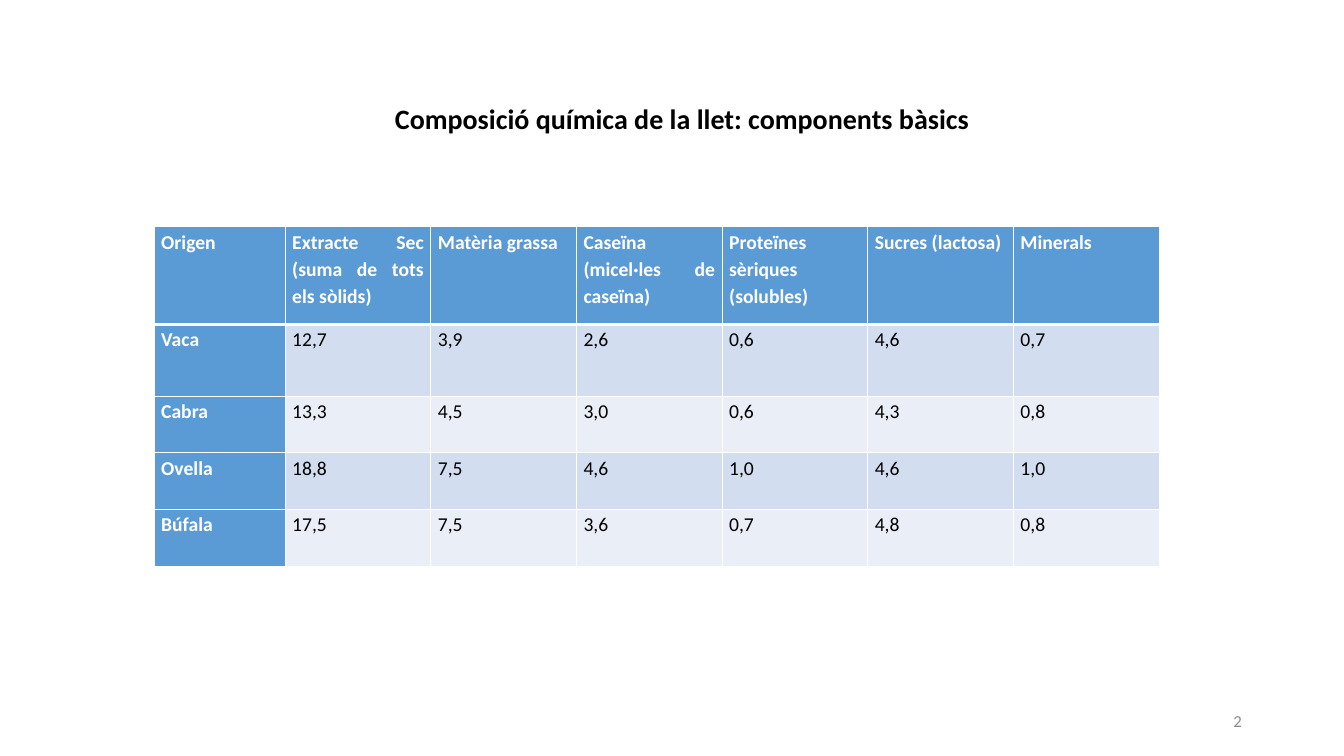
from lxml.etree import SubElement
from pptx import Presentation
from pptx.dml.color import RGBColor
from pptx.enum.text import MSO_ANCHOR as Anchor, MSO_AUTO_SIZE as AutoSize, PP_ALIGN as Align
from pptx.oxml.ns import qn
from pptx.util import Pt

WHITE = RGBColor(0xFF, 0xFF, 0xFF)
BLACK = RGBColor(0x00, 0x00, 0x00)
GREY = RGBColor(0x8C, 0x8C, 0x8C)
HEADING_BLUE = RGBColor(0x5B, 0x9B, 0xD5)
BANDS = [RGBColor(0xD2, 0xDE, 0xEF), RGBColor(0xEA, 0xEF, 0xF7)]

ORIGIN_WIDTH = 93.6
ROW_HEIGHTS = [69.84, 51.12, 40.56, 40.56, 40.56]
COMPOSITION = [
    ["Origen", "Extracte Sec (suma de tots els sòlids)", "Matèria grassa",
     "Caseïna (micel·les de caseïna)", "Proteïnes sèriques (solubles)",
     "Sucres (lactosa)", "Minerals"],
    ["Vaca", "12,7", "3,9", "2,6", "0,6", "4,6", "0,7"],
    ["Cabra", "13,3", "4,5", "3,0", "0,6", "4,3", "0,8"],
    ["Ovella", "18,8", "7,5", "4,6", "1,0", "4,6", "1,0"],
    ["Búfala", "17,5", "7,5", "3,6", "0,7", "4,8", "0,8"],
]

CELL_FORMAT = {"margin_left": Pt(5), "margin_right": Pt(5), "margin_top": 0,
               "margin_bottom": 0, "vertical_anchor": Anchor.TOP}
CELL_PARAGRAPH = {"alignment": Align.JUSTIFY, "line_spacing": 1.15, "space_after": Pt(10)}


def apply_format(target, values):
    """Set every attribute named in values on the target."""
    for attribute, value in values.items():
        setattr(target, attribute, value)


def write(paragraph, text, size, color, bold=False):
    """Put one formatted run of text in a paragraph."""
    run = paragraph.add_run()
    run.text = text
    apply_format(run.font, {"name": "Calibri", "size": Pt(size), "bold": bold})
    run.font.color.rgb = color


def add_borders(cell, bottom_width, top_width):
    """Draw white rules around a table cell."""
    properties = cell._tc.get_or_add_tcPr()
    widths = {"a:lnL": 1, "a:lnR": 1, "a:lnT": top_width, "a:lnB": bottom_width}
    for side, width in widths.items():
        rule = SubElement(properties, qn(side), w=str(Pt(width)))
        SubElement(SubElement(rule, qn("a:solidFill")), qn("a:srgbClr"), val=str(WHITE))


def add_text(slide, box, text, size, color, bold=False, align=Align.LEFT,
             anchor=Anchor.TOP, auto_size=AutoSize.NONE):
    """Add a wrapped one-line text box in the given box."""
    frame = slide.shapes.add_textbox(*map(Pt, box)).text_frame
    apply_format(frame, {"word_wrap": True, "vertical_anchor": anchor, "auto_size": auto_size})
    frame.paragraphs[0].alignment = align
    write(frame.paragraphs[0], text, size, color, bold)


def add_composition_table(slide, box):
    """Add the milk composition table in the given box."""
    table = slide.shapes.add_table(len(COMPOSITION), len(COMPOSITION[0]), *map(Pt, box)).table
    apply_format(table, {"first_row": True, "first_col": True, "horz_banding": True})
    component_width = (box[2] - ORIGIN_WIDTH) / (len(COMPOSITION[0]) - 1)
    for index, column in enumerate(table.columns):
        column.width = Pt(component_width if index else ORIGIN_WIDTH)
    for row_index, (height, entries) in enumerate(zip(ROW_HEIGHTS, COMPOSITION)):
        table.rows[row_index].height = Pt(height)
        for column_index, entry in enumerate(entries):
            cell = table.cell(row_index, column_index)
            heading = row_index == 0 or column_index == 0
            apply_format(cell, CELL_FORMAT)
            add_borders(cell, 3 if row_index == 0 else 1, 3 if row_index == 1 else 1)
            cell.fill.solid()
            cell.fill.fore_color.rgb = HEADING_BLUE if heading else BANDS[(row_index - 1) % 2]
            paragraph = cell.text_frame.paragraphs[0]
            apply_format(paragraph, CELL_PARAGRAPH)
            write(paragraph, entry, 14, WHITE if heading else BLACK, heading)


def build_composition_slide(deck):
    """Add the slide with its table, page number and title."""
    slide = deck.slides.add_slide(deck.slide_layouts[6])
    add_composition_table(slide, (110.16, 162, 717.84, 242.64))
    add_text(slide, (678.24, 500.4, 216, 28.8), "2", 12, GREY,
             align=Align.RIGHT, anchor=Anchor.MIDDLE)
    add_text(slide, (275.04, 69.12, 450.72, 31.68),
             "Composició química de la llet: components bàsics", 20, BLACK,
             bold=True, auto_size=AutoSize.SHAPE_TO_FIT_TEXT)


def main():
    """Build and save the deck."""
    deck = Presentation()
    apply_format(deck, {"slide_width": Pt(960), "slide_height": Pt(540)})
    build_composition_slide(deck)
    deck.save("out.pptx")


if __name__ == "__main__":
    main()
